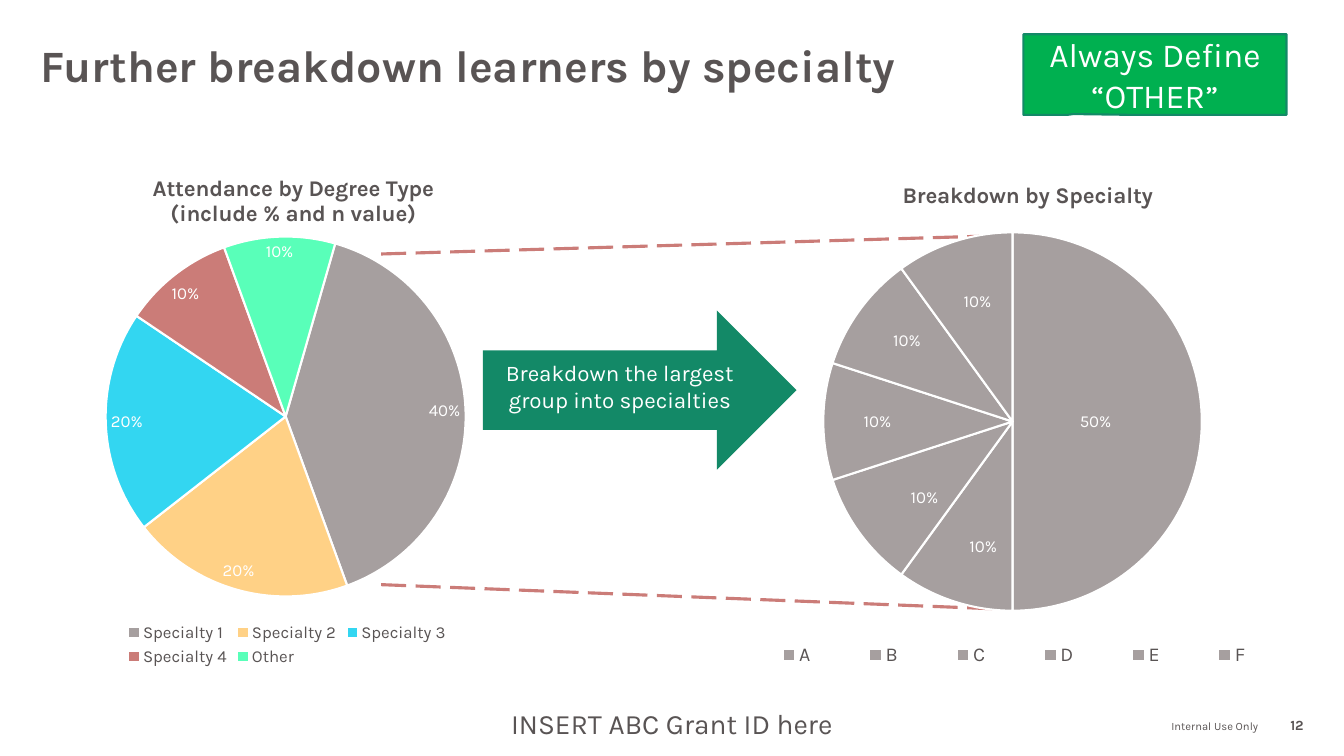
from lxml import etree
from pptx import Presentation
from pptx.chart.data import CategoryChartData
from pptx.dml.color import RGBColor
from pptx.enum.chart import XL_CHART_TYPE as CHART, XL_LABEL_POSITION as LABEL, XL_LEGEND_POSITION as LEGEND
from pptx.enum.dml import MSO_LINE as DASH
from pptx.enum.shapes import MSO_CONNECTOR as CONN, MSO_SHAPE as SHAPE
from pptx.enum.text import MSO_ANCHOR as ANCHOR, PP_ALIGN as ALIGN
from pptx.oxml.ns import qn
from pptx.util import Pt

PX = 9144
FONT = "Karla"
TEXT, WHITE, GREY, GREEN, ROSE = "595454", "FFFFFF", "A69F9F", "138967", "CB7C78"
PLOT = dict(x=0.17, y=0.121, w=0.654, h=0.751)


def px(*values):
    return [v * PX for v in values]


def rgb(value):
    return RGBColor.from_string(value)


def set_font(font, size, color=TEXT, bold=False):
    font.name, font.size, font.bold = FONT, Pt(size), bold
    font.color.rgb = rgb(color)


def fill_text(sp, text, size, color=TEXT, bold=False, align=ALIGN.CENTER,
              anchor=ANCHOR.TOP, insets=(0, 0, 0, 0), wrap=True, spacing=None):
    tf = sp.text_frame
    tf.word_wrap, tf.vertical_anchor = wrap, anchor
    tf.margin_left, tf.margin_top, tf.margin_right, tf.margin_bottom = px(*insets)
    p = tf.paragraphs[0]
    p.text, p.alignment, p.line_spacing = text, align, spacing
    set_font(p.font, size, color, bold)


def add_text(s, box, text, size, **style):
    fill_text(s.shapes.add_textbox(*px(*box)), text, size, **style)


def add_block(s, kind, box, fill):
    sp = s.shapes.add_shape(kind, *px(*box))
    sp.shadow.inherit = False
    sp.fill.solid()
    sp.fill.fore_color.rgb = rgb(fill)
    sp.line.fill.background()
    return sp


def set_layout(parent, index, inner=False, **sizes):
    old = parent.find(qn("c:layout"))
    if old is not None:
        parent.remove(old)
    layout = etree.Element(qn("c:layout"))
    manual = etree.SubElement(layout, qn("c:manualLayout"))
    if inner:
        etree.SubElement(manual, qn("c:layoutTarget")).set("val", "inner")
    if index != 1 or parent.tag != qn("c:dLbl"):
        for axis in "xy":
            etree.SubElement(manual, qn(f"c:{axis}Mode")).set("val", "edge")
    for name, value in sizes.items():
        etree.SubElement(manual, qn(f"c:{name}")).set("val", str(value))
    parent.insert(index, layout)


def add_pie(s, box, title, title_at, categories, values, colors, legend_size,
            position, start=0, legend_box=None, label_shifts=()):
    data = CategoryChartData(number_format="0%")
    data.categories = categories
    data.add_series("Series 1", values)
    chart = s.shapes.add_chart(CHART.PIE, *px(*box), data).chart
    set_font(chart.font, 12)
    chart.has_title = True
    tf = chart.chart_title.text_frame
    tf.text = title
    for p in tf.paragraphs:
        p.alignment = ALIGN.CENTER
        set_font(p.font, 16, bold=True)
    set_layout(chart.chart_title._element, 1, x=title_at[0], y=title_at[1])

    chart.has_legend = True
    chart.legend.position = LEGEND.BOTTOM
    chart.legend.include_in_layout = False
    set_font(chart.legend.font, legend_size)
    if legend_box:
        set_layout(chart.legend._element, 1, **legend_box)

    plot = chart.plots[0]
    plot.vary_by_categories = True
    etree.SubElement(plot._element, qn("c:firstSliceAng")).set("val", str(start))
    set_layout(plot._element.getparent(), 0, inner=True, **PLOT)

    series = plot.series[0]
    for i, color in enumerate(colors):
        fmt = series.points[i].format
        fmt.fill.solid()
        fmt.fill.fore_color.rgb = rgb(color)
        fmt.line.color.rgb = rgb(WHITE)
        fmt.line.width = Pt(1.5)
    labels = series.data_labels
    labels.show_value = True
    labels.number_format, labels.number_format_is_linked = "0%", False
    labels.position = position
    set_font(labels.font, 12, WHITE)
    for i in range(len(label_shifts)):
        label = series.points[i].data_label
        label.position = position
        set_font(label.font, 12, WHITE)
    for node, (x, y) in zip(series._element.iter(qn("c:dLbl")), label_shifts):
        set_layout(node, 1, x=x, y=y)


def add_guides(s, left, right, ends):
    for y1, y2 in ends:
        line = s.shapes.add_connector(CONN.STRAIGHT, *px(left, y1, right, y2))
        line.line.color.rgb = rgb(ROSE)
        line.line.width = Pt(2.25)
        line.line.dash_style = DASH.LONG_DASH
        etree.SubElement(line._element.spPr, qn("a:effectLst"))


def add_header(s, x, y, w):
    add_text(s, (x, y, w, 53), "Further breakdown learners by specialty", 32,
             bold=True, align=ALIGN.LEFT, spacing=0.9)
    callout = add_block(s, SHAPE.RECTANGULAR_CALLOUT, (x + 975, y - 9, 261, 80), "00B050")
    callout.adjustments[0], callout.adjustments[1] = -0.31, 0.49
    callout.line.color.rgb = rgb(GREEN)
    callout.line.width = Pt(1.5)
    fill_text(callout, "Always Define “OTHER”", 24, WHITE,
              anchor=ANCHOR.MIDDLE, insets=(20, 10, 20, 10))


def add_arrow(s, box):
    arrow = add_block(s, SHAPE.RIGHT_ARROW, box, GREEN)
    fill_text(arrow, "Breakdown the largest group into specialties", 16, WHITE,
              anchor=ANCHOR.MIDDLE, insets=(10, 5, 10, 13))


def add_footer(s, y):
    add_text(s, (403, y - 7, 527, 40), "INSERT ABC Grant ID here", 20, insets=(10, 5, 10, 5))
    add_text(s, (897, y, 351, 25), "Internal Use Only", 8, align=ALIGN.RIGHT,
             anchor=ANCHOR.BOTTOM, insets=(0, 0, 0, 1))
    add_text(s, (1258, y, 35, 25), "12", 10, bold=True, align=ALIGN.RIGHT,
             anchor=ANCHOR.BOTTOM, wrap=False)


def main():
    prs = Presentation()
    prs.slide_width, prs.slide_height = px(1333, 750)
    s = prs.slides.add_slide(prs.slide_layouts[6])
    add_guides(s, 378, 986, [(252, 234), (580, 604)])
    add_pie(s, (12, 165, 546, 500),
            "Attendance by Degree Type\n(include % and n value)", (0.25, 0.01),
            ["Specialty 1", "Specialty 2", "Specialty 3", "Specialty 4", "Other"],
            [0.4, 0.2, 0.2, 0.1, 0.1], [GREY, "FFD186", "33D6F1", ROSE, "59FFB9"],
            12, LABEL.BEST_FIT, start=16)
    add_pie(s, (719, 170, 574, 500), "Breakdown by Specialty", (0.3, 0.01),
            list("ABCDEF"), [0.5] + [0.1] * 5, [GREY] * 6, 14, LABEL.CENTER,
            legend_box=dict(x=0.01, y=0.92, w=0.98, h=0.08),
            label_shifts=[(-0.02, 0), (0, 0.07), (-0.02, 0.04),
                          (-0.07, 0), (-0.05, -0.05), (-0.01, -0.06)])
    add_header(s, 40, 43, 1253)
    add_arrow(s, (479, 308, 311, 158))
    add_footer(s, 703)
    prs.save("out.pptx")


if __name__ == "__main__":
    main()
